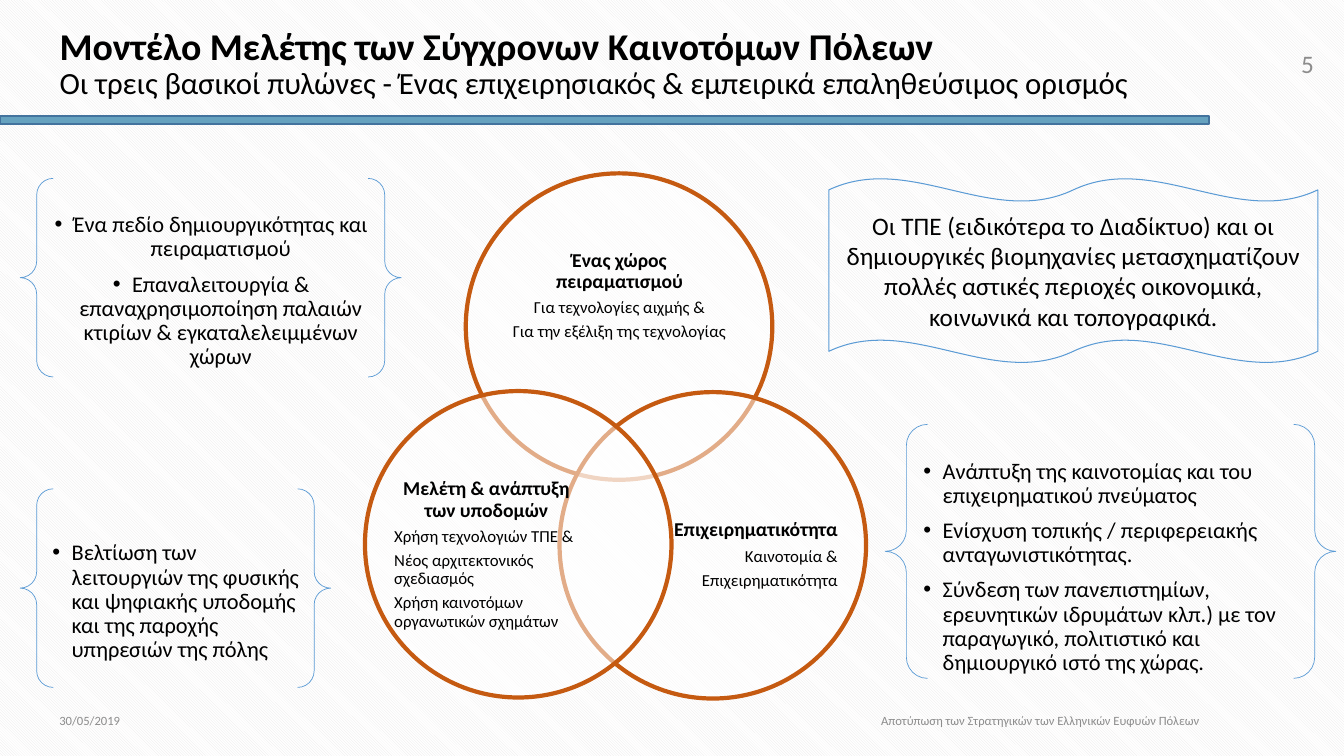
from dataclasses import dataclass

from lxml.etree import SubElement
from pptx import Presentation
from pptx.dml.color import RGBColor
from pptx.enum.dml import MSO_PATTERN
from pptx.enum.shapes import MSO_SHAPE as Shape
from pptx.enum.text import MSO_ANCHOR, MSO_AUTO_SIZE, PP_ALIGN as Align
from pptx.oxml.ns import qn
from pptx.shapes.autoshape import Shape as AutoShape
from pptx.text.text import TextFrame
from pptx.util import Inches, Pt


@dataclass(frozen=True)
class Theme:
    font: str = "Calibri"
    ink: str = "000000"
    muted: str = "8C8C8C"
    paper: str = "FFFFFF"
    hatch: str = "E7E6E6"
    bar: str = "66A2BF"
    bar_edge: str = "43739E"
    ring: str = "C55A11"
    frame: str = "5B9BD5"
    title: int = 27
    subtitle: int = 22
    lead: int = 18
    bullet: int = 16
    heading: int = 14
    detail: int = 12
    footer: int = 9


@dataclass(frozen=True)
class Box:
    """Columns and rows of a grid with cells a tenth of an inch wide."""
    col: float
    row: float
    cols: float
    rows: float

    def emu(self) -> list[int]:
        return [Inches(n / 10) for n in (self.col, self.row, self.cols, self.rows)]


@dataclass(frozen=True)
class Pillar:
    col: float
    row: float
    label: Box
    heading: str
    details: tuple[str, ...]
    heading_align: Align
    detail_align: Align


@dataclass(frozen=True)
class Brace:
    box: Box
    align: Align
    items: tuple[str, ...]


@dataclass(frozen=True)
class Note:
    box: Box
    text: str
    size: int
    align: Align


T = Theme()
DIAMETER = 30.4
BULLET_GAP = 7.9

PILLARS = (
    Pillar(46.2, 17.2, Box(50.3, 22.5, 22.3, 13.7), "Ένας χώρος πειραματισμού",
           ("Για τεχνολογίες αιχμής &", "Για την εξέλιξη της τεχνολογίας"),
           Align.CENTER, Align.CENTER),
    Pillar(55.5, 38.9, Box(64.8, 46.7, 18.3, 16.7), "Επιχειρηματικότητα",
           ("Καινοτομία &", "Επιχειρηματικότητα"), Align.RIGHT, Align.RIGHT),
    Pillar(36.2, 38.8, Box(39.1, 46.7, 18.3, 16.7), "Μελέτη & ανάπτυξη των υποδομών",
           ("Χρήση τεχνολογιών ΤΠΕ &", "Νέος αρχιτεκτονικός σχεδιασμός",
            "Χρήση καινοτόμων οργανωτικών σχημάτων"), Align.CENTER, Align.LEFT),
)
BRACES = (
    Brace(Box(2, 17.7, 37.8, 19.7), Align.CENTER,
          ("Ένα πεδίο δημιουργικότητας και πειραματισμού",
           "Επαναλειτουργία & επαναχρησιμοποίηση παλαιών κτιρίων & "
           "εγκαταλελειμμένων χώρων")),
    Brace(Box(2, 48.5, 30.8, 19.7), Align.LEFT,
          ("Βελτίωση των λειτουργιών της φυσικής και ψηφιακής υποδομής και της "
           "παροχής υπηρεσιών της πόλης",)),
    Brace(Box(87.8, 42.1, 44.7, 25.2), Align.LEFT,
          ("Ανάπτυξη της καινοτομίας και του επιχειρηματικού πνεύματος",
           "Ενίσχυση τοπικής / περιφερειακής ανταγωνιστικότητας.",
           "Σύνδεση των πανεπιστημίων, ερευνητικών ιδρυμάτων κλπ.) με τον "
           "παραγωγικό, πολιτιστικό και δημιουργικό ιστό της χώρας.")),
)
NOTES = (
    Note(Box(124.2, 1.3, 7.1, 10), "5", T.lead, Align.RIGHT),
    Note(Box(4.9, 69.5, 16.8, 4), "30/05/2019", T.footer, Align.LEFT),
    Note(Box(32.8, 69.5, 87.1, 4),
         "Αποτύπωση των Στρατηγικών των Ελληνικών Ευφυών Πόλεων", T.footer, Align.RIGHT),
)


def rgb(color: str) -> RGBColor:
    return RGBColor.from_string(color)


def add_run(p, text: str, size: int, bold: bool, color: str) -> None:
    r = p.add_run()
    r.text = text
    r.font.name, r.font.size, r.font.bold = T.font, Pt(size), bold
    r.font.color.rgb = rgb(color)


def add_text(tf: TextFrame, text: str, *, size: int, bold: bool = False,
             color: str = T.ink, align: Align = Align.LEFT, spacing: float = 1.0,
             before: float = 0, after: float = 0, bullet: bool = False) -> None:
    """Fill the empty first paragraph, or append one."""
    first = not tf.text
    p = tf.paragraphs[0] if first else tf.add_paragraph()
    if bullet:
        pPr = p._p.get_or_add_pPr()
        pPr.set("marL", str(Inches(0.2)))
        pPr.set("indent", str(Inches(-0.19)))
        SubElement(pPr, qn("a:buFont"), typeface="Arial")
        SubElement(pPr, qn("a:buChar"), char="•")
        tabs = SubElement(pPr, qn("a:tabLst"))
        SubElement(tabs, qn("a:tab"), pos=str(Inches(0.2)), algn="l")
    p.alignment, p.line_spacing = align, spacing
    p.space_before, p.space_after = Pt(0 if first else before), Pt(after)
    add_run(p, text, size, bold, color)


def prepare(tf: TextFrame) -> TextFrame:
    tf.word_wrap, tf.auto_size = True, MSO_AUTO_SIZE.NONE
    tf.vertical_anchor = MSO_ANCHOR.MIDDLE
    return tf


def add_shape(shapes, kind: Shape, box: Box, line: str, width: float,
              fill: str | None = None, alpha: int = 100) -> AutoShape:
    sp = shapes.add_shape(kind, *box.emu())
    sp.shadow.inherit = False
    sp.line.color.rgb, sp.line.width = rgb(line), Pt(width)
    if fill is None:
        sp.fill.background()
    else:
        sp.fill.solid()
        sp.fill.fore_color.rgb = rgb(fill)
        if alpha < 100:
            color = sp._element.spPr.find(qn("a:solidFill"))[0]
            SubElement(color, qn("a:alpha"), val=str(alpha * 1000))
    return sp


def add_title(s) -> None:
    title = s.shapes.title
    title.left, title.top, title.width, title.height = Box(4.9, 1.4, 115, 10).emu()
    tf = prepare(title.text_frame)
    add_text(tf, "Μοντέλο Μελέτης των Σύγχρονων Καινοτόμων Πόλεων",
             size=T.title, bold=True, spacing=0.9)
    p = tf.paragraphs[0]
    p.add_line_break()
    add_run(p, "Οι τρεις βασικοί πυλώνες - Ένας επιχειρησιακός & εμπειρικά "
               "επαληθεύσιμος ορισμός", T.subtitle, False, T.ink)


def add_pillar(shapes, pillar: Pillar) -> None:
    add_shape(shapes, Shape.OVAL, Box(pillar.col, pillar.row, DIAMETER, DIAMETER),
              T.ring, 3, T.paper, alpha=50)
    tf = prepare(shapes.add_textbox(*pillar.label.emu()).text_frame)
    tf.margin_left = tf.margin_right = tf.margin_top = tf.margin_bottom = 0
    add_text(tf, pillar.heading, size=T.heading, bold=True, align=pillar.heading_align,
             spacing=0.9, after=0.35 * T.heading)
    for detail in pillar.details:
        add_text(tf, detail, size=T.detail, align=pillar.detail_align,
                 spacing=0.9, after=0.35 * T.detail)


def add_brace(s, brace: Brace) -> None:
    tf = prepare(add_shape(s.shapes, Shape.DOUBLE_BRACE, brace.box, T.frame, 0.5).text_frame)
    tf.margin_top = Pt(3.6 + BULLET_GAP)
    for item in brace.items:
        add_text(tf, item, size=T.bullet, align=brace.align, spacing=0.9,
                 before=BULLET_GAP, bullet=True)


def main() -> None:
    prs = Presentation()
    prs.slide_width, prs.slide_height = Inches(13.33), Inches(7.5)
    s = prs.slides.add_slide(prs.slide_layouts[5])
    fill = s.background.fill
    fill.patterned()
    fill.pattern = MSO_PATTERN.LIGHT_DOWNWARD_DIAGONAL
    fill.fore_color.rgb, fill.back_color.rgb = rgb(T.hatch), rgb(T.paper)

    add_shape(s.shapes, Shape.RECTANGLE, Box(0, 11.5, 119.9, 0.8), T.bar_edge, 1, T.bar)
    add_title(s)
    for note in NOTES:
        tf = prepare(s.shapes.add_textbox(*note.box.emu()).text_frame)
        add_text(tf, note.text, size=note.size, color=T.muted, align=note.align)
    venn = s.shapes.add_group_shape()
    for pillar in PILLARS:
        add_pillar(venn.shapes, pillar)
    for brace in BRACES:
        add_brace(s, brace)
    wave = add_shape(s.shapes, Shape.DOUBLE_WAVE, Box(82.2, 17.7, 48.5, 18.3), T.frame, 0.75)
    add_text(prepare(wave.text_frame),
             "Οι ΤΠΕ (ειδικότερα το Διαδίκτυο) και οι δημιουργικές βιομηχανίες "
             "μετασχηματίζουν πολλές αστικές περιοχές οικονομικά, κοινωνικά και "
             "τοπογραφικά.", size=T.lead, align=Align.CENTER)
    prs.save("out.pptx")


if __name__ == "__main__":
    main()
